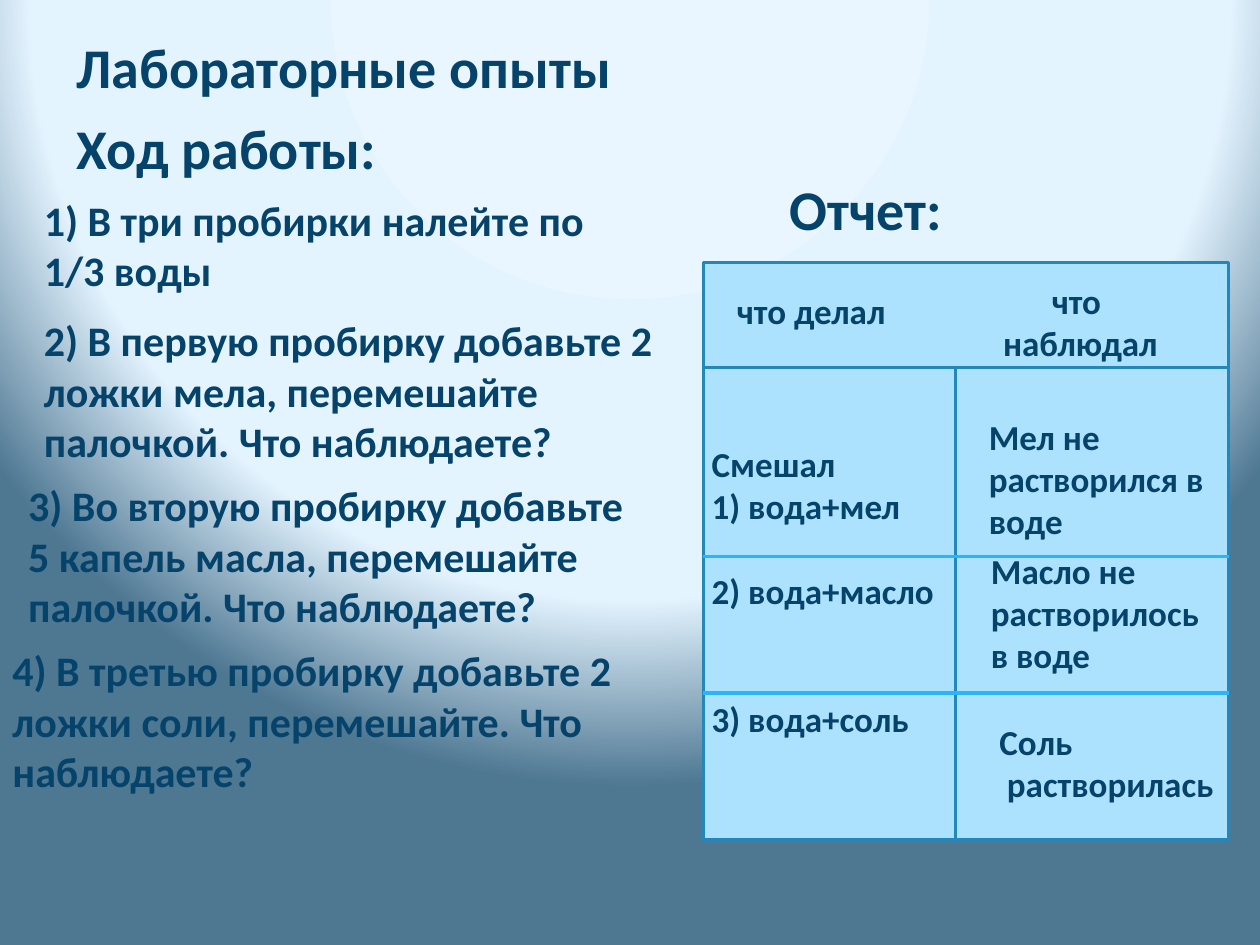
"""Build the slide on laboratory experiments with its report table."""
from pptx import Presentation
from pptx.dml.color import RGBColor
from pptx.enum.shapes import MSO_CONNECTOR as Connector, MSO_SHAPE as Shape
from pptx.enum.text import MSO_ANCHOR as Anchor, MSO_AUTO_SIZE as AutoSize, PP_ALIGN as Align
from pptx.oxml import parse_xml
from pptx.oxml.ns import nsdecls
from pptx.util import Inches, Pt

NAVY = RGBColor(0x06, 0x43, 0x6B)
PALE_BLUE = RGBColor(0xAD, 0xE2, 0xFE)
BORDER_BLUE = RGBColor(0x24, 0x87, 0xBB)
BRIGHT_BLUE = RGBColor(0x2B, 0xB4, 0xFC)
GLOW = [(0, "E9F6FF"), (76, "E4F4FF"), (100, "4E7792")]

WIDTH, HEIGHT = Inches(10), Inches(7.5)
COLUMNS = 120
CELL = WIDTH / COLUMNS
HEADING, STEP, REPORT = 32, 24, 20
REPORT_LINE = 24.4

TABLE_LEFT, TABLE_MIDDLE, TABLE_RIGHT = 67, 91, 117
TABLE_TOP, TABLE_BODY, TABLE_BOTTOM = 25, 35, 80
ROW_RULES = [53, 66]

STEPS = [
    ((3, 17.9, 57.8, 14.5), "1) В три пробирки налейте по 1/3 воды"),
    ((3, 29.4, 63, 15.7),
     "2) В первую пробирку добавьте 2 ложки мела, перемешайте палочкой. Что наблюдаете?"),
    ((1.5, 45.1, 59.4, 15.7),
     "3) Во вторую пробирку добавьте 5 капель масла, перемешайте палочкой. Что наблюдаете?"),
    ((0, 60.8, 60.8, 15.7),
     "4) В третью пробирку добавьте 2 ложки соли, перемешайте. Что наблюдаете?"),
]
OBSERVATIONS = [
    ((93, 39, 24, 13.3), ["Мел не", "растворился в воде"]),
    ((93.2, 51.7, 24, 16.9), ["Масло не", "растворилось в воде"]),
]


def grid(*cells):
    """Turn counts of grid cells into lengths."""
    return [round(count * CELL) for count in cells]


def paint_background(slide):
    """Fill the slide with a round glow from above."""
    stops = "".join(f'<a:gs pos="{share * 1000}"><a:srgbClr val="{tint}"/></a:gs>'
                    for share, tint in GLOW)
    slide.element.cSld.insert(0, parse_xml(
        f'<p:bg {nsdecls("p", "a")}><p:bgPr><a:gradFill rotWithShape="1">'
        f'<a:gsLst>{stops}</a:gsLst><a:path path="circle">'
        '<a:fillToRect l="50000" t="-80000" r="50000" b="180000"/></a:path>'
        '</a:gradFill><a:effectLst/></p:bgPr></p:bg>'))


def write(frame, lines, size, align=Align.LEFT):
    """Write bold navy paragraphs into a text frame and return them."""
    layout = {"word_wrap": True, "vertical_anchor": Anchor.TOP,
              "auto_size": AutoSize.SHAPE_TO_FIT_TEXT}
    for name, value in layout.items():
        setattr(frame, name, value)
    frame.text = "\n".join(lines)
    for paragraph in frame.paragraphs:
        paragraph.alignment = align
        for run in paragraph.runs:
            for name, value in {"name": "Calibri", "size": Pt(size), "bold": True}.items():
                setattr(run.font, name, value)
            run.font.color.rgb = NAVY
    return frame.paragraphs


def add_title(slide, place, wording):
    """Move the title placeholder and fill it."""
    for name, value in zip(("left", "top", "width", "height"), grid(*place)):
        setattr(slide.shapes.title, name, value)
    write(slide.shapes.title.text_frame, [wording], HEADING)


def add_text(slide, place, lines, size, align=Align.LEFT):
    """Add a text box and return its paragraphs."""
    box = slide.shapes.add_textbox(*grid(*place))
    return write(box.text_frame, lines, size, align)


def add_panel(slide, left, top, right, bottom):
    """Add one bordered field of the report."""
    panel = slide.shapes.add_shape(
        Shape.RECTANGLE, *grid(left, top, right - left, bottom - top))
    panel.shadow.inherit = False
    panel.fill.solid()
    panel.fill.fore_color.rgb = PALE_BLUE
    panel.line.color.rgb = BORDER_BLUE
    panel.line.width = Pt(2)


def add_rule(slide, row):
    """Draw a line across the report."""
    rule = slide.shapes.add_connector(
        Connector.STRAIGHT, *grid(TABLE_LEFT, row, TABLE_RIGHT, row))
    rule.line.color.rgb = BRIGHT_BLUE
    rule.line.width = Pt(2.25)
    rule.element.spPr.append(parse_xml(f'<a:effectLst {nsdecls("a")}/>'))


def add_report(slide):
    """Build the report: fields, rules and entries."""
    add_panel(slide, TABLE_LEFT, TABLE_BODY, TABLE_MIDDLE, TABLE_BOTTOM)
    add_panel(slide, TABLE_MIDDLE, TABLE_BODY, TABLE_RIGHT, TABLE_BOTTOM)
    add_panel(slide, TABLE_LEFT, TABLE_TOP, TABLE_RIGHT, TABLE_BODY)
    add_text(slide, (74, 16, 33, 7.7), ["Отчет:"], HEADING)
    add_text(slide, (69, 27, 20.5, 5.3), ["что делал"], REPORT)
    add_text(slide, (92, 26, 21.8, 9.2), ["что ", "наблюдал"], REPORT, Align.CENTER)

    mixtures = add_text(
        slide, (66.6, 41.6, 26.8, 29.5),
        ["Смешал", "1) вода+мел", "2) вода+масло", "3) вода+соль"], REPORT)
    for mixture, skipped_lines in zip(mixtures, (0, 0, 1, 2)):
        mixture.space_before = Pt(skipped_lines * REPORT_LINE)

    for place, lines in OBSERVATIONS:
        add_text(slide, place, lines, REPORT)
    salt = add_text(slide, (94, 68, 26, 9.2), ["Соль", "растворилась"], REPORT)
    salt[1]._p.get_or_add_pPr().set("marL", str(Inches(0.06)))

    for row in ROW_RULES:
        add_rule(slide, row)


def main():
    """Create the presentation and save it."""
    deck = Presentation()
    deck.slide_width, deck.slide_height = WIDTH, HEIGHT
    slide = deck.slides.add_slide(deck.slide_layouts[5])
    paint_background(slide)
    add_title(slide, (6.1, 2.5, 95.9, 7.7), "Лабораторные опыты")
    add_text(slide, (6.1, 10.2, 34.9, 7.7), ["Ход работы:"], HEADING)
    for place, wording in STEPS:
        add_text(slide, place, [wording], STEP)
    add_report(slide)
    deck.save("out.pptx")


if __name__ == "__main__":
    main()
